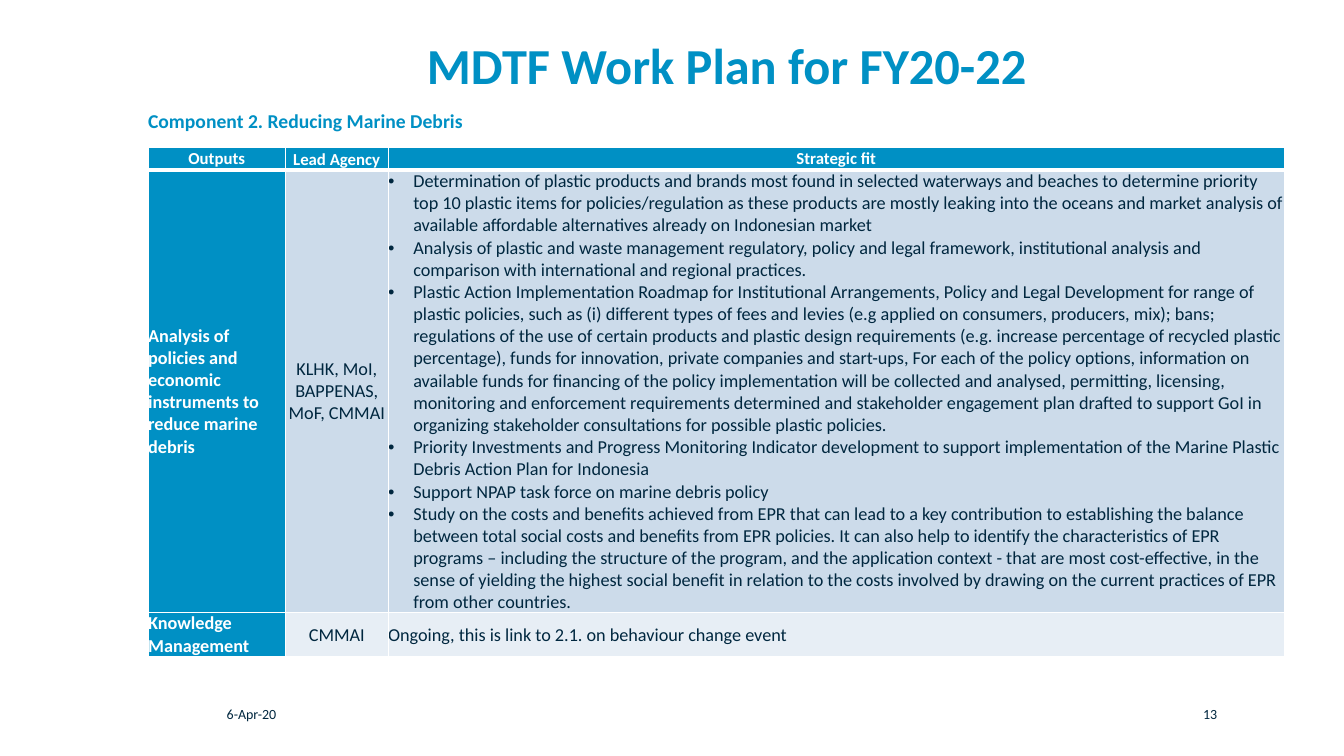
from dataclasses import dataclass

from lxml import etree
from pptx import Presentation
from pptx import util as u
from pptx.dml import color
from pptx.enum import text
from pptx.oxml import ns

PX = 9144  # EMU per px, 100 px to the inch
LEFT, CENTER, RIGHT = text.PP_ALIGN.LEFT, text.PP_ALIGN.CENTER, text.PP_ALIGN.RIGHT


@dataclass(frozen=True)
class Theme:
    font: str = "Calibri"
    accent: str = "0090C4"
    ink: str = "00273F"
    white: str = "FFFFFF"
    bands: tuple = ("CCDBEA", "E7EEF5")
    title: int = 36
    subtitle: int = 14
    body: int = 13
    header: int = 12
    footer: int = 10


HEADERS = ["Outputs", "Lead Agency", "Strategic fit"]
POLICY_WORK = [
    "Determination of plastic products and brands most found in selected waterways and beaches to "
    "determine priority top 10 plastic items for policies/regulation as these products are mostly "
    "leaking into the oceans and market analysis of available affordable alternatives already on "
    "Indonesian market",
    "Analysis of plastic and waste management regulatory, policy and legal framework, institutional "
    "analysis and comparison with international and regional practices.",
    "Plastic Action Implementation Roadmap for Institutional Arrangements, Policy and Legal "
    "Development for range of plastic policies, such as (i) different types of fees and levies (e.g "
    "applied on consumers, producers, mix); bans; regulations of the use of certain products and "
    "plastic design requirements (e.g. increase percentage of recycled plastic percentage), funds "
    "for innovation, private companies and start-ups, For each of the policy options, information "
    "on available funds for financing of the policy implementation will be collected and analysed, "
    "permitting, licensing, monitoring and enforcement requirements determined and stakeholder "
    "engagement plan drafted to support GoI in organizing stakeholder consultations for possible "
    "plastic policies.",
    "Priority Investments and Progress Monitoring Indicator development to support implementation "
    "of the Marine Plastic Debris Action Plan for Indonesia",
    "Support NPAP task force on marine debris policy",
    "Study on the costs and benefits achieved from EPR that can lead to a key contribution to "
    "establishing the balance between total social costs and benefits from EPR policies. It can "
    "also help to identify the characteristics of EPR programs – including the structure of the "
    "program, and the application context - that are most cost-effective, in the sense of yielding "
    "the highest social benefit in relation to the costs involved by drawing on the current "
    "practices of EPR from other countries.",
]
OUTPUTS = [
    ("Analysis of policies and economic instruments to reduce marine debris",
     "KLHK, MoI, BAPPENAS, MoF, CMMAI", POLICY_WORK),
    ("Knowledge Management", "CMMAI",
     ["Ongoing, this is link to 2.1. on behaviour change event"]),
]


class SlideBuilder:
    def __init__(self, prs, theme):
        self.theme = theme
        self.slide = prs.slides.add_slide(prs.slide_layouts[5])

    def add_text(self, tf, paragraphs, size, ink, bold=False, align=LEFT, spacing=None,
                 bullets=False):
        tf.word_wrap = True
        for i, words in enumerate(paragraphs):
            p = tf.paragraphs[0] if i == 0 else tf.add_paragraph()
            p.alignment = align
            if spacing:
                p.line_spacing = spacing
            if bullets:
                self.bullet(p)
            r = p.add_run()
            r.text = words
            r.font.name, r.font.size, r.font.bold = self.theme.font, u.Pt(size), bold
            r.font.color.rgb = color.RGBColor.from_string(ink)

    def bullet(self, p):
        ppr = p._p.get_or_add_pPr()
        ppr.set("marL", str(25 * PX))
        ppr.set("indent", str(-25 * PX))
        etree.SubElement(ppr, ns.qn("a:buFont"), typeface="Arial")
        etree.SubElement(ppr, ns.qn("a:buChar"), char="•")

    def title(self, box, words):
        s = self.slide.shapes.title
        s.left, s.top, s.width, s.height = (v * PX for v in box)
        s.text_frame.vertical_anchor = text.MSO_ANCHOR.MIDDLE
        self.add_text(s.text_frame, [words], self.theme.title, self.theme.accent, True, CENTER, 0.9)

    def label(self, box, words, size, ink, anchor=text.MSO_ANCHOR.TOP, **style):
        tf = self.slide.shapes.add_textbox(*(v * PX for v in box)).text_frame
        tf.vertical_anchor = anchor
        self.add_text(tf, [words], size, ink, **style)

    def table(self, left, top, widths, heights):
        frame = self.slide.shapes.add_table(len(heights), len(widths), left * PX, top * PX,
                                            sum(widths) * PX, sum(heights) * PX)
        for column, width in zip(frame.table.columns, widths):
            column.width = width * PX
        for row, height in zip(frame.table.rows, heights):
            row.height = height * PX
        return frame.table

    def cell(self, cell, paragraphs, fill, size, ink, rules, **style):
        """Fill one cell; rules gives border widths in points by side."""
        cell.margin_left = cell.margin_right = cell.margin_top = cell.margin_bottom = 0
        cell.vertical_anchor = text.MSO_ANCHOR.MIDDLE
        cell.fill.solid()
        cell.fill.fore_color.rgb = color.RGBColor.from_string(fill)
        self.add_text(cell.text_frame, paragraphs, size, ink, **style)
        tcpr = cell._tc.get_or_add_tcPr()
        for i, side in enumerate("LRTB"):
            ln = etree.Element(ns.qn(f"a:ln{side}"), w=str(u.Pt(rules.get(side, 1))))
            solid = etree.SubElement(ln, ns.qn("a:solidFill"))
            etree.SubElement(solid, ns.qn("a:srgbClr"), val=self.theme.white)
            tcpr.insert(i, ln)


def main():
    prs = Presentation()
    prs.slide_width, prs.slide_height = 1333 * PX, 750 * PX
    t = Theme()
    s = SlideBuilder(prs, t)

    s.title((220, 33, 1002, 69), "MDTF Work Plan for FY20-22")
    s.label((137, 102, 494, 38), "Component 2. Reducing Marine Debris", t.subtitle, t.accent,
            text.MSO_ANCHOR.MIDDLE, bold=True, spacing=0.9)

    plan = s.table(147, 146, [136, 102, 889], [22, 439, 44])
    for c, heading in enumerate(HEADERS):
        s.cell(plan.cell(0, c), [heading], t.accent, t.header, t.white, {"B": 3},
               bold=True, align=CENTER, spacing=1.14 if c == 1 else None)
    for r, (output, agency, fit) in enumerate(OUTPUTS, 1):
        band = t.bands[r - 1]
        rules = {"T": 3} if r == 1 else {}
        s.cell(plan.cell(r, 0), [output], t.accent, t.body, t.white, rules, bold=True)
        s.cell(plan.cell(r, 1), [agency], band, t.body, t.ink, rules, align=CENTER)
        s.cell(plan.cell(r, 2), fit, band, t.body, t.ink, rules, bullets=len(fit) > 1)

    s.label((215, 695, 82, 40), "6-Apr-20", t.footer, t.ink)
    s.label((1178, 695, 39, 40), "13", t.footer, t.ink, align=RIGHT)
    prs.save("out.pptx")


if __name__ == "__main__":
    main()
